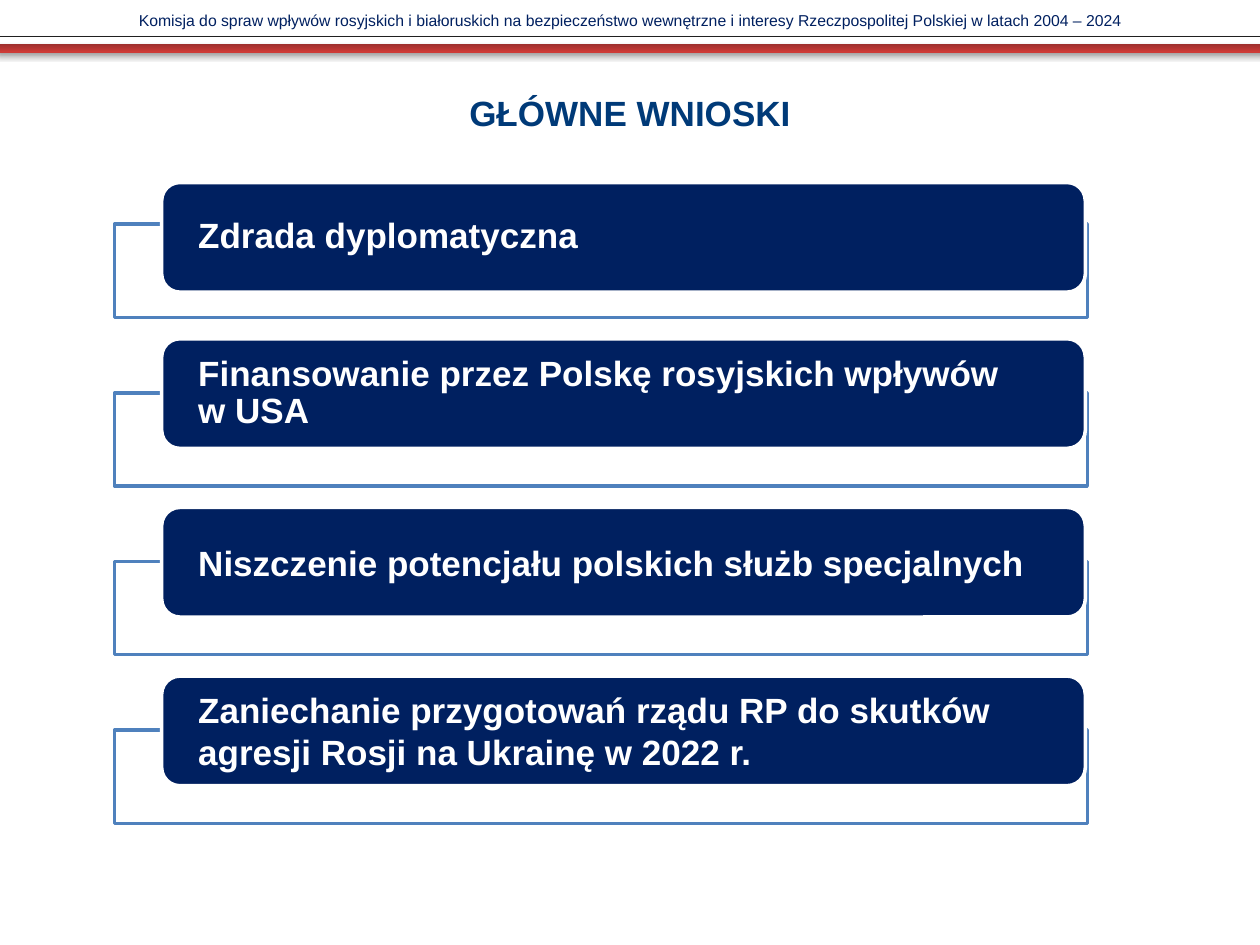
"""Builds the slide of main conclusions with four framed cards."""
from lxml import etree
from pptx import Presentation
from pptx.dml.color import RGBColor
from pptx.enum.shapes import MSO_SHAPE
from pptx.enum.text import MSO_ANCHOR, PP_ALIGN
from pptx.oxml.ns import qn
from pptx.util import Cm, Pt

RECT, ROUND = MSO_SHAPE.RECTANGLE, MSO_SHAPE.ROUNDED_RECTANGLE
MIDDLE = MSO_ANCHOR.MIDDLE
LEFT, CENTER = PP_ALIGN.LEFT, PP_ALIGN.CENTER
WHITE = RGBColor(0xFF, 0xFF, 0xFF)
BLACK = RGBColor(0x20, 0x20, 0x20)
NAVY = RGBColor(0x00, 0x20, 0x60)
TITLE = RGBColor(0x00, 0x3A, 0x78)
BLUE = RGBColor(0x4F, 0x81, 0xBD)
DARK_RED = RGBColor(0x9C, 0x2F, 0x2D)
RED = RGBColor(0xCE, 0x3B, 0x37)

HEADER = (
    "Komisja do spraw wpływów rosyjskich i białoruskich na bezpieczeństwo "
    "wewnętrzne i interesy Rzeczpospolitej Polskiej w latach 2004 – 2024"
)
CARDS = [
    ("Zdrada dyplomatyczna", 0.84, 0.9),
    ("Finansowanie przez Polskę rosyjskich wpływów\vw USA", 1.09, 0.9),
    ("Niszczenie potencjału polskich służb specjalnych", 1.09, 1.0),
    ("Zaniechanie przygotowań rządu RP do skutków agresji Rosji na Ukrainę w 2022 r.",
     1.09, 1.0),
]
FIRST, PITCH = 4.52, 3.4


class Deck:
    """Holds the style and the current slide."""

    font = "Arial"

    def __init__(self):
        self.prs = Presentation()
        self.prs.slide_width, self.prs.slide_height = Cm(25.4), Cm(19.05)
        self.slide = self.prs.slides.add_slide(self.prs.slide_layouts[5])

    def style(self, shape, text, size, color, bold, align, inset=0, gap=1.0):
        frame = shape.text_frame
        frame.text = text
        frame.word_wrap = True
        frame.vertical_anchor = MIDDLE
        frame.margin_left = frame.margin_right = Cm(inset)
        frame.margin_top = frame.margin_bottom = 0
        par = frame.paragraphs[0]
        par.alignment, par.line_spacing = align, gap
        for run in par.runs:
            font = run.font
            font.name, font.size, font.bold = self.font, Pt(size), bold
            font.color.rgb = color

    def title(self, text, x, y, w, h):
        shape = self.slide.shapes.title
        shape.left, shape.top, shape.width, shape.height = map(Cm, (x, y, w, h))
        self.style(shape, text, 20, TITLE, True, CENTER)

    def label(self, text, x, y, w, h):
        shape = self.slide.shapes.add_textbox(*map(Cm, (x, y, w, h)))
        self.style(shape, text, 9, NAVY, False, CENTER)

    def block(self, kind, x, y, w, h, fill, line=None, width=2):
        shape = self.slide.shapes.add_shape(kind, *map(Cm, (x, y, w, h)))
        shape.shadow.inherit = False
        shape.fill.solid()
        shape.fill.fore_color.rgb = fill
        if line is None:
            shape.line.fill.background()
        else:
            shape.line.color.rgb, shape.line.width = line, Pt(width)
        return shape

    def shade(self, shape):
        effects = shape._element.spPr.find(qn("a:effectLst"))
        drop = etree.SubElement(effects, qn("a:outerShdw"), blurRad=str(Pt(3.1)),
                                dist=str(Pt(1.8)), dir="5400000", rotWithShape="0")
        color = etree.SubElement(drop, qn("a:srgbClr"), val="000000")
        etree.SubElement(color, qn("a:alpha"), val="35000")

    def band(self):
        self.shade(self.block(RECT, -0.08, 0.74, 25.56, 0.2, WHITE, BLACK, 0.25))
        bar = self.block(RECT, -0.08, 0.89, 25.56, 0.18, RED)
        bar.fill.gradient()
        bar.fill.gradient_angle = 270
        for stop, color, place in zip(bar.fill.gradient_stops, (DARK_RED, RED), (0, 0.9)):
            stop.color.rgb, stop.position = color, place
        self.shade(bar)

    def card(self, text, y, rise, gap):
        frame = self.block(RECT, 2.31, y, 19.61, 1.88, WHITE, BLUE)
        color = frame._element.spPr.find(qn("a:solidFill"))[0]
        etree.SubElement(color, qn("a:alpha"), val="90000")
        box = self.block(ROUND, 3.26, y - rise, 18.62, 2.21, NAVY, WHITE)
        self.style(box, text, 20, WHITE, True, LEFT, 0.63, gap)


def main():
    deck = Deck()
    deck.title("GŁÓWNE WNIOSKI", 0, 1.66, 25.4, 1.2)
    deck.label(HEADER, 0, 0.1, 25.4, 0.6)
    deck.band()
    for i, (text, rise, gap) in enumerate(CARDS):
        deck.card(text, FIRST + i * PITCH, rise, gap)
    deck.prs.save("out.pptx")


if __name__ == "__main__":
    main()
